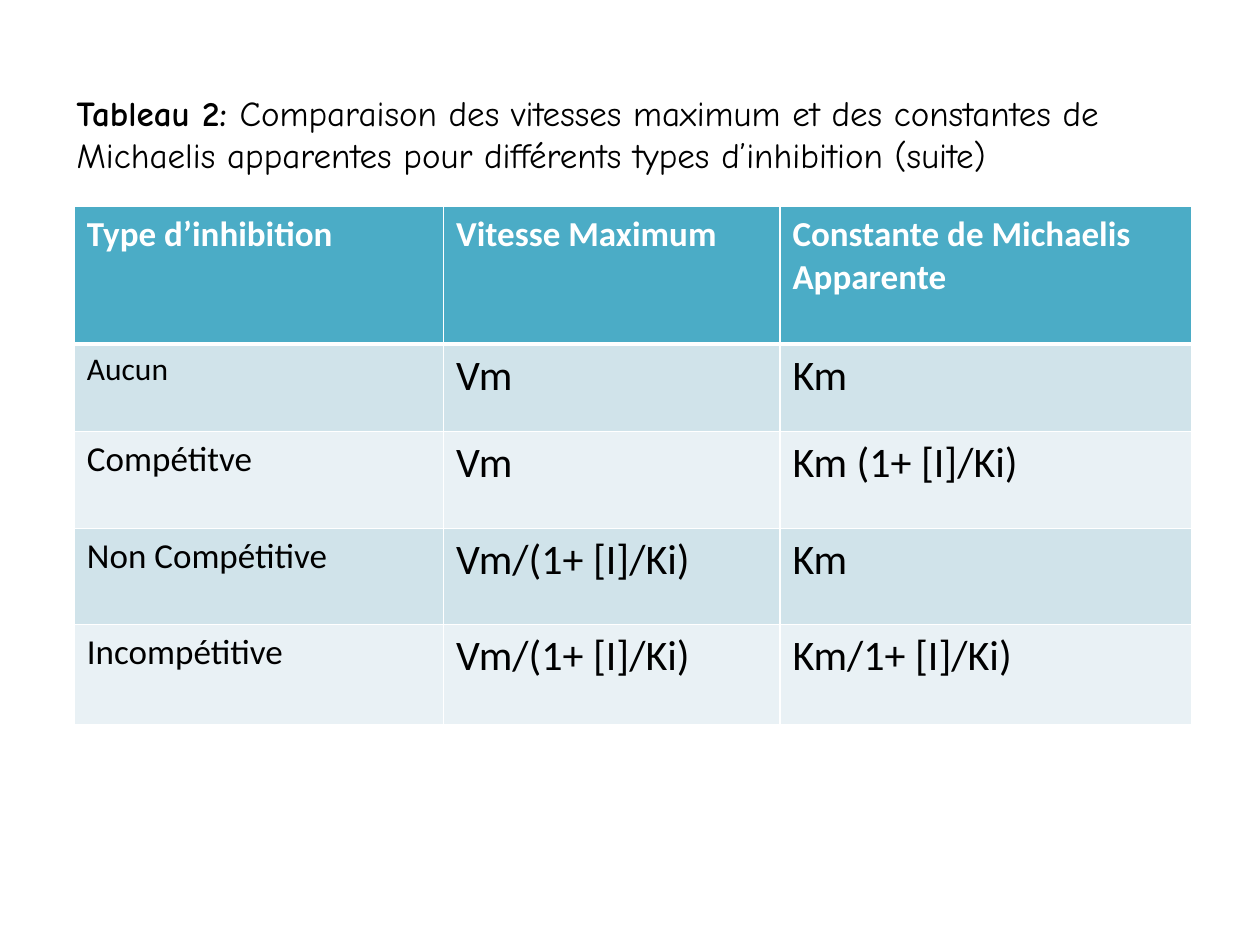
from lxml import etree
from pptx import Presentation
from pptx import util as u
from pptx.dml import color
from pptx.enum import text
from pptx.oxml import ns

WHITE, BLACK, TEAL = "FFFFFF", "000000", "4BACC6"
BANDS = ("D0E3EA", "E9F1F5")
COLUMNS = (210.96, 192.24, 235.44)
ROWS = (78.5, 50, 55.5, 55, 57.5)
CELLS = (
    ("Type d’inhibition", "Vitesse Maximum", "Constante de Michaelis\nApparente"),
    ("Aucun", "Vm", "Km"),
    ("Compétitve", "Vm", "Km (1+ [I]/Ki)"),
    ("Non Compétitive", "Vm/(1+ [I]/Ki)", "Km"),
    ("Incompétitive", "Vm/(1+ [I]/Ki)", "Km/1+ [I]/Ki)"),
)
CAPTION = (
    ("Tableau 2: ", True),
    ("Comparaison des vitesses maximum et des constantes de Michaelis "
     "apparentes pour différents types d’inhibition (suite)", False),
)


def rgb(value):
    """Return the colour for a hex string."""
    return color.RGBColor.from_string(value)


def add_run(p, words, hue, **formats):
    """Add a run with the given colour and font values."""
    r = p.add_run()
    r.text = words
    r.font.color.rgb = rgb(hue)
    for name, value in formats.items():
        setattr(r.font, name, value)


def add_border(cell, side, width):
    """Draw a white border on one side of a cell."""
    ln = etree.SubElement(cell._tc.get_or_add_tcPr(), ns.qn(f"a:ln{side}"),
                          w=str(u.Pt(width)))
    fill = etree.SubElement(ln, ns.qn("a:solidFill"))
    etree.SubElement(fill, ns.qn("a:srgbClr"), val=WHITE)


def add_caption(s, left, top, width, height):
    """Place the table caption in the given box."""
    tf = s.shapes.add_textbox(*map(u.Pt, (left, top, width, height))).text_frame
    tf.word_wrap = True
    tf.auto_size = text.MSO_AUTO_SIZE.SHAPE_TO_FIT_TEXT
    for words, bold in CAPTION:
        add_run(tf.paragraphs[0], words, BLACK, name="Comic Neue",
                size=u.Pt(20), bold=bold)


def fill_cell(cell, words, row, column):
    """Set the borders, fill and text of one cell."""
    header = row == 0
    widths = {"L": 1, "R": 1, "T": 3 if row == 1 else 1, "B": 3 if header else 1}
    for side, width in widths.items():
        add_border(cell, side, width)
    cell.fill.solid()
    cell.fill.fore_color.rgb = rgb(TEAL if header else BANDS[(row - 1) % 2])
    size = 20 if header else 24 if column else 18 if row == 1 else 20
    tf = cell.text_frame
    for i, line in enumerate(words.split("\n")):
        p = tf.add_paragraph() if i else tf.paragraphs[0]
        add_run(p, line, WHITE if header else BLACK, name="Calibri",
                size=u.Pt(size), bold=header)


def add_comparison(s, left, top):
    """Place the inhibition table with its corner at the given point."""
    box = (left, top, sum(COLUMNS), sum(ROWS))
    table = s.shapes.add_table(len(ROWS), len(COLUMNS), *map(u.Pt, box)).table
    for column, width in zip(table.columns, COLUMNS):
        column.width = u.Pt(width)
    for i, (height, line) in enumerate(zip(ROWS, CELLS)):
        table.rows[i].height = u.Pt(height)
        for j, words in enumerate(line):
            fill_cell(table.cell(i, j), words, i, j)


def main():
    """Build and save the slide."""
    prs = Presentation()
    prs.slide_width, prs.slide_height = u.Pt(720), u.Pt(540)
    s = prs.slides.add_slide(prs.slide_layouts[6])
    add_comparison(s, 42.5, 118)
    add_caption(s, 36.72, 49, 640.8, 55.5)
    prs.save("out.pptx")


if __name__ == "__main__":
    main()
